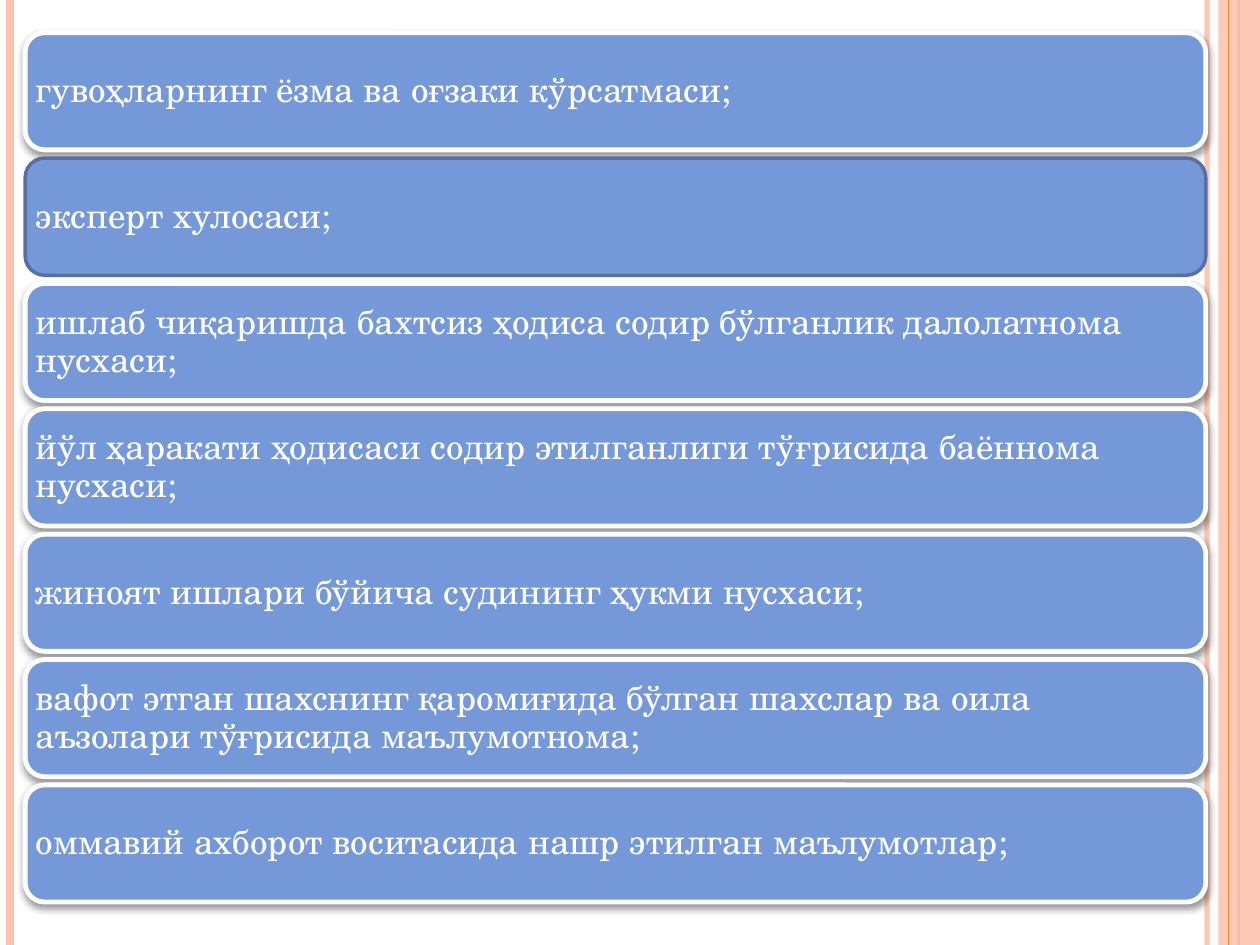
import lxml.etree
import pptx
import pptx.dml.color
import pptx.enum.shapes
import pptx.enum.text
import pptx.oxml.ns
import pptx.util

Inches = pptx.util.Inches
Pt = pptx.util.Pt
qn = pptx.oxml.ns.qn


def paint(color_format, color, opacity=100):
    """Set a solid fill's colour and opacity in percent."""
    color_format.solid()
    color_format.fore_color.rgb = pptx.dml.color.RGBColor.from_string(color)
    if opacity < 100:
        for element in color_format._xPr.iter(qn("a:srgbClr")):
            lxml.etree.SubElement(element, qn("a:alpha"), val=str(opacity * 1000))


def set_effects(shape, shadow=False):
    """Give the shape an effect list, empty or with a soft shadow below."""
    effects = lxml.etree.SubElement(shape._element.spPr, qn("a:effectLst"))
    if shadow:
        outer = lxml.etree.SubElement(
            effects, qn("a:outerShdw"), blurRad=str(Pt(4)), dist=str(Pt(2)),
            dir="5400000", rotWithShape="0")
        black = lxml.etree.SubElement(outer, qn("a:srgbClr"), val="000000")
        lxml.etree.SubElement(black, qn("a:alpha"), val="40000")


presentation = pptx.Presentation()
presentation.slide_width = Inches(10)
presentation.slide_height = Inches(7.5)
slide = presentation.slides.add_slide(presentation.slide_layouts[6])
shapes = slide.shapes

# Edge stripes: the wide band lies above the first three lines
stripes = [
    (9.58, "FEC3AE", 3, 93),
    (0.08, "FEC3AE", 4.5, 100),
    (9.83, "FE8637", 1.5, 100),
    "band",
    (9.75, "FE8637", 0.75, 100),
]
for stripe in stripes:
    if stripe == "band":
        band = shapes.add_shape(pptx.enum.shapes.MSO_SHAPE.RECTANGLE,
                                Inches(9.67), 0, Inches(0.33), Inches(7.5))
        band.shadow.inherit = False
        band.line.fill.background()
        paint(band.fill, "FEC3AE", 87)
        continue
    x, color, width, opacity = stripe
    line = shapes.add_connector(pptx.enum.shapes.MSO_CONNECTOR.STRAIGHT,
                                Inches(x), 0, Inches(x), Inches(7.5))
    line.line.width = Pt(width)
    paint(line.line.fill, color, opacity)
    set_effects(line)

# Stacked list of evidence
documents = [
    "гувоҳларнинг ёзма ва оғзаки кўрсатмаси;",
    "эксперт хулосаси;",
    "ишлаб чиқаришда бахтсиз ҳодиса содир бўлганлик далолатнома нусхаси;",
    "йўл ҳаракати ҳодисаси содир этилганлиги тўғрисида баённома нусхаси;",
    "жиноят ишлари бўйича судининг ҳукми нусхаси;",
    "вафот этган шахснинг қаромиғида бўлган шахслар ва оила аъзолари тўғрисида маълумотнома;",
    "оммавий ахборот воситасида нашр этилган маълумотлар;",
]
outlined_row = 1
first_top, last_top = 0.26, 6.23
pitch = (last_top - first_top) / (len(documents) - 1)
frame_format = {
    "word_wrap": True,
    "vertical_anchor": pptx.enum.text.MSO_ANCHOR.MIDDLE,
    # The rounded corners add about as much again to each inset
    "margin_left": Inches(0.04),
    "margin_right": Inches(0.04),
    "margin_top": Inches(0.04),
    "margin_bottom": Inches(0.04),
}
paragraph_format = {
    "alignment": pptx.enum.text.PP_ALIGN.LEFT,
    "line_spacing": 0.9,
}
font_format = {"name": "TeX Gyre Schola", "size": Pt(20)}

for row, document in enumerate(documents):
    box = shapes.add_shape(pptx.enum.shapes.MSO_SHAPE.ROUNDED_RECTANGLE,
                           Inches(0.2), Inches(first_top + row * pitch),
                           Inches(9.37), Inches(0.93))
    outlined = row == outlined_row
    paint(box.fill, "7598D9")
    paint(box.line.fill, "5770A1" if outlined else "FFFFFF")
    box.line.width = Pt(2 if outlined else 2.75)
    set_effects(box, shadow=not outlined)

    frame = box.text_frame
    frame.text = document
    paragraph = frame.paragraphs[0]
    font = paragraph.runs[0].font
    for target, values in ((frame, frame_format), (paragraph, paragraph_format),
                           (font, font_format)):
        for name, value in values.items():
            setattr(target, name, value)
    paint(font.fill, "FFFFFF")

presentation.save("out.pptx")
